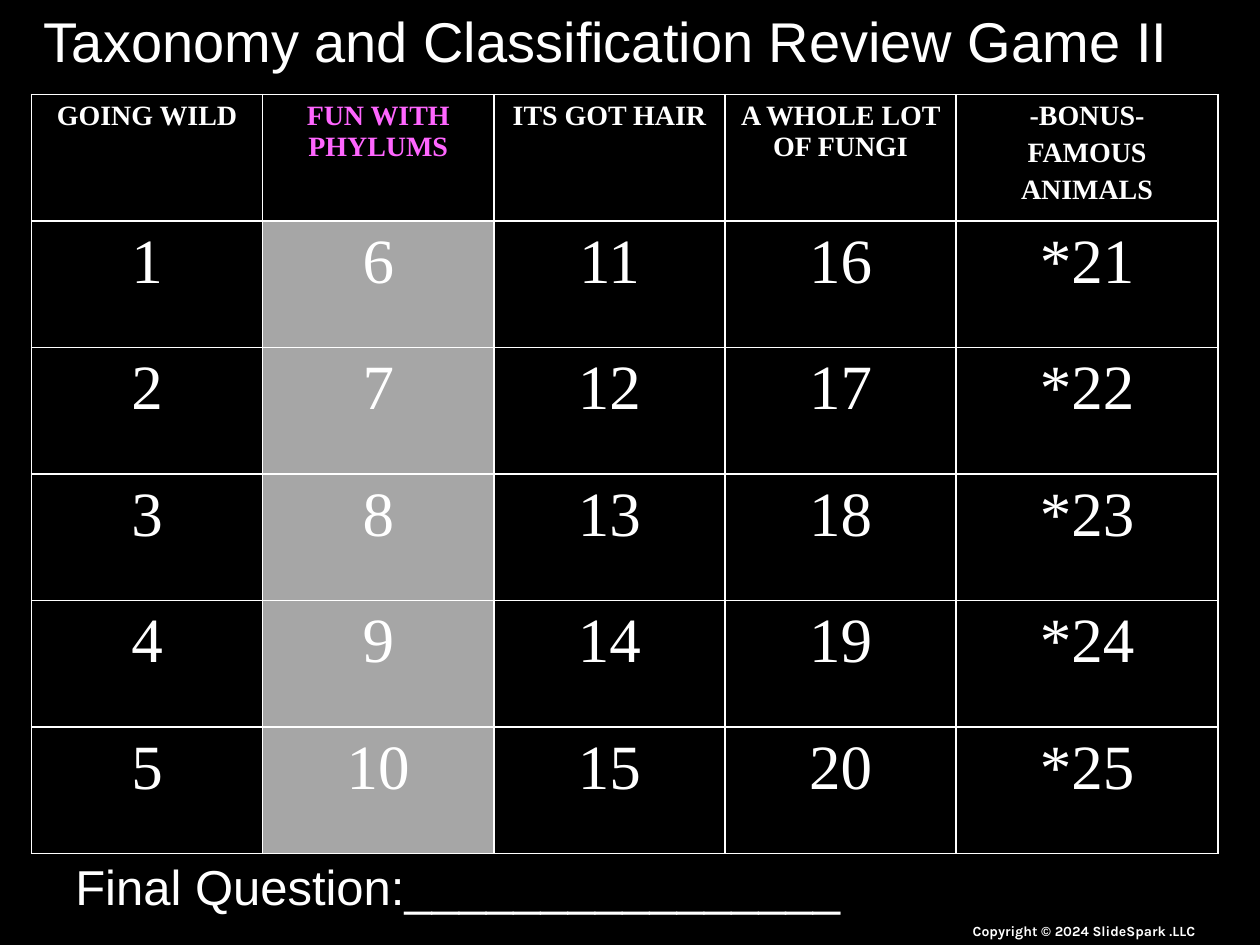
"""Build the review game board slide with its title, grid and final question."""
import pptx
import pptx.dml.color
import pptx.enum.text
import pptx.oxml
import pptx.oxml.ns
import pptx.util

Pt = pptx.util.Pt
ALIGN = pptx.enum.text.PP_ALIGN

COLORS = {"back": "000000", "text": "FFFFFF", "pink": "FF66FF", "gray": "A6A6A6"}
HEADS = ["GOING WILD", "FUN WITH PHYLUMS", "ITS GOT HAIR", "A WHOLE LOT OF FUNGI",
         "-BONUS-\nFAMOUS\nANIMALS"]
LEVELS = 5
WIDTHS = [132.1] * 4 + [149.6]
HEIGHT = 72.3
SHADED = 1
BONUS = 4
LABELS = [
    ("Copyright © 2024 SlideSpark .LLC", (444.2, 523.4, 246.2, 16.6),
     dict(size=8, font="Karla", bold=True, align=ALIGN.RIGHT)),
    ("Taxonomy and Classification Review Game II", (18, 0, 702, 45.4),
     dict(size=32, font="Arial")),
    ("Final Question:" + "_" * 16, (36, 486, 473.8, 41),
     dict(size=28, font="Arial")),
]


def paint(name):
    return pptx.dml.color.RGBColor.from_string(COLORS[name])


def write(frame, text, size, font, color="text", bold=False, align=ALIGN.LEFT, gap=0):
    frame.word_wrap = True
    for i, line in enumerate(text.split("\n")):
        para = frame.paragraphs[0] if i == 0 else frame.add_paragraph()
        para.alignment = align
        if i:
            para.space_before = Pt(gap)
        run = para.add_run()
        run.text = line
        run.font.size = Pt(size)
        run.font.name = font
        run.font.bold = bold
        run.font.color.rgb = paint(color)


def edge(cell):
    props = cell._tc.get_or_add_tcPr()
    for side in ("lnL", "lnR", "lnT", "lnB"):
        props.append(pptx.oxml.parse_xml(
            f'<a:{side} {pptx.oxml.ns.nsdecls("a")} w="{Pt(1)}"><a:solidFill>'
            f'<a:srgbClr val="{COLORS["text"]}"/></a:solidFill></a:{side}>'))


def board(slide):
    rows = LEVELS + 1
    table = slide.shapes.add_table(rows, len(HEADS), Pt(18), Pt(54),
                                   Pt(sum(WIDTHS)), Pt(HEIGHT * rows)).table
    table.first_row = table.horz_banding = False
    for row in table.rows:
        row.height = Pt(HEIGHT)
    for c, head in enumerate(HEADS):
        table.columns[c].width = Pt(WIDTHS[c])
        star = "*" if c == BONUS else ""
        for r in range(rows):
            cell = table.cell(r, c)
            edge(cell)
            if r and c == SHADED:
                cell.fill.solid()
                cell.fill.fore_color.rgb = paint("gray")
            else:
                cell.fill.background()
            text = f"{star}{c * LEVELS + r}" if r else head
            write(cell.text_frame, text, size=36 if r else 16,
                  font="Times New Roman", bold=not r, align=ALIGN.CENTER, gap=3.4,
                  color="pink" if not r and c == SHADED else "text")


def main():
    deck = pptx.Presentation()
    deck.slide_width, deck.slide_height = Pt(720), Pt(540)
    slide = deck.slides.add_slide(deck.slide_layouts[6])
    slide.background.fill.solid()
    slide.background.fill.fore_color.rgb = paint("back")
    board(slide)
    for text, place, style in LABELS:
        box = slide.shapes.add_textbox(*map(Pt, place))
        write(box.text_frame, text, **style)
    deck.save("out.pptx")


if __name__ == "__main__":
    main()
